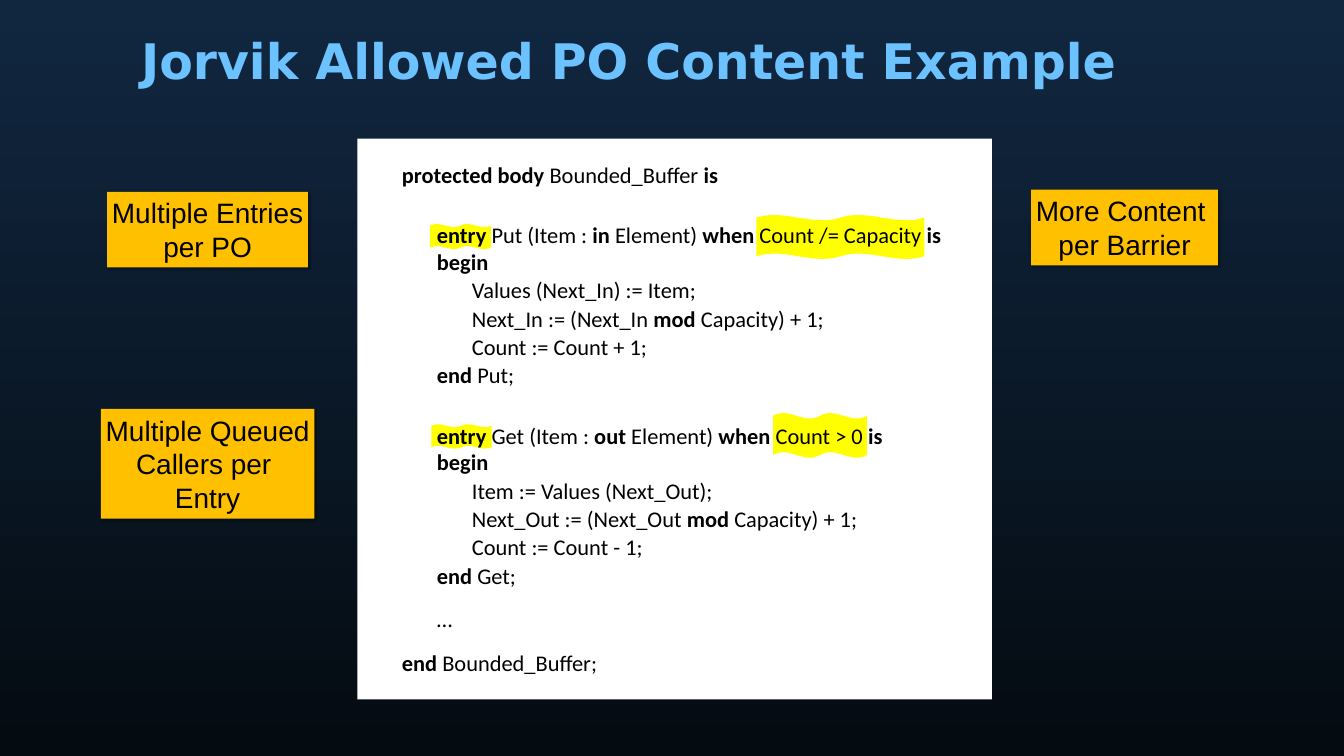
from lxml import etree
from pptx import Presentation
from pptx.dml.color import RGBColor
from pptx.enum.shapes import MSO_SHAPE
from pptx.enum.text import MSO_ANCHOR, PP_ALIGN
from pptx.oxml.ns import qn
from pptx.util import Pt

RECT, WAVE = MSO_SHAPE.RECTANGLE, MSO_SHAPE.DOUBLE_WAVE
MIDDLE, CENTER = MSO_ANCHOR.MIDDLE, PP_ALIGN.CENTER

NIGHT = RGBColor(0x11, 0x27, 0x40)
DEEP = RGBColor(0x04, 0x0B, 0x11)
SKY = RGBColor(0x6B, 0xC2, 0xFF)
WHITE = RGBColor(0xFF, 0xFF, 0xFF)
BLACK = RGBColor(0, 0, 0)
YELLOW = RGBColor(0xFF, 0xFF, 0)
AMBER = RGBColor(0xFF, 0xC0, 0)

INDENT = 50

# Code lines: indent level, space before, text with keywords between asterisks
CODE = [
    (0, 0, "*protected body *Bounded_Buffer *is*"),
    (1, 48, "*entry *Put (Item : *in *Element) *when *Count /= Capacity *is*"),
    (1, 0, "*begin*"),
    (2, 2, "Values (Next_In) := Item;"),
    (2, 2, "Next_In := (Next_In *mod *Capacity) + 1;"),
    (2, 2, "Count := Count + 1;"),
    (1, 2, "*end *Put;"),
    (1, 48, "*entry *Get (Item : *out *Element) *when *Count > 0 *is*"),
    (1, 0, "*begin*"),
    (2, 2, "Item := Values (Next_Out);"),
    (2, 2, "Next_Out := (Next_Out *mod *Capacity) + 1;"),
    (2, 2, "Count := Count - 1;"),
    (1, 2, "*end *Get;"),
    (1, 24, "…"),
    (0, 24, "*end *Bounded_Buffer;"),
]

# Offsets from the corner of the code panel, then sizes
HIGHLIGHTS = [
    (104, 122, 87, 36),
    (570, 109, 240, 63),
    (106, 408, 86, 35),
    (594, 392, 134, 64),
]

LABELS = [
    ((153, 274, 287, 108), ["Multiple Entries", "per PO"]),
    ((144, 584, 305, 157), ["Multiple Queued", "Callers per ", "Entry"]),
    ((1473, 271, 267, 108), ["More Content ", "per Barrier"]),
]


def set_font(p, name, size, color, bold=False):
    p.font.name, p.font.size, p.font.bold = name, Pt(size), bold
    p.font.color.rgb = color


def set_insets(tf, inset):
    tf.margin_left = tf.margin_top = tf.margin_right = tf.margin_bottom = Pt(inset)


def add_block(s, kind, box, color):
    """Add a plain filled shape without line or shadow."""
    sp = s.shapes.add_shape(kind, *map(Pt, box))
    sp.shadow.inherit = False
    sp.fill.solid()
    sp.fill.fore_color.rgb = color
    sp.line.fill.background()
    return sp


def add_shadow(sp):
    effects = sp._element.spPr.find(qn("a:effectLst"))
    shadow = etree.SubElement(effects, qn("a:outerShdw"), blurRad=str(Pt(4)),
                              dist=str(Pt(3)), dir="2700000", rotWithShape="0")
    color = etree.SubElement(shadow, qn("a:srgbClr"), val="000000")
    etree.SubElement(color, qn("a:alpha"), val="40000")


def paint_background(s):
    fill = s.background.fill
    fill.gradient()
    fill.gradient_angle = 270
    for stop, color in zip(fill.gradient_stops, (NIGHT, DEEP)):
        stop.color.rgb = color


def add_title(s, box, text):
    tf = s.shapes.add_textbox(*map(Pt, box)).text_frame
    tf.word_wrap = True
    tf.vertical_anchor = MIDDLE
    set_insets(tf, 3.6)
    p = tf.paragraphs[0]
    p.text = text
    p.line_spacing = 1.1
    set_font(p, "DejaVu Sans", 70, SKY, True)


def add_code_panel(s, box):
    left, top, width, height = box
    add_block(s, RECT, box, WHITE)
    for x, y, w, h in HIGHLIGHTS:
        add_block(s, WAVE, (left + x, top + y, w, h), YELLOW)
    text_box = (left + 56.6, top + 28, width - 113, height - 51)
    tf = s.shapes.add_textbox(*map(Pt, text_box)).text_frame
    tf.word_wrap = True
    for i, (level, before, line) in enumerate(CODE):
        p = tf.add_paragraph() if i else tf.paragraphs[0]
        p._p.get_or_add_pPr().set("marL", str(Pt(level * INDENT)))
        if before:
            p.space_before = Pt(before)
        set_font(p, "Calibri", 32, BLACK)
        for j, part in enumerate(line.split("*")):
            if part:
                r = p.add_run()
                r.text = part
                r.font.bold = j % 2 == 1


def add_label(s, box, lines):
    sp = add_block(s, RECT, box, AMBER)
    add_shadow(sp)
    tf = sp.text_frame
    tf.word_wrap = False
    tf.vertical_anchor = MIDDLE
    set_insets(tf, 5.76)
    for i, line in enumerate(lines):
        p = tf.add_paragraph() if i else tf.paragraphs[0]
        p.text = line
        p.alignment = CENTER
        set_font(p, "Arial", 40, BLACK)


def main():
    prs = Presentation()
    prs.slide_width, prs.slide_height = Pt(1920), Pt(1080)
    s = prs.slides.add_slide(prs.slide_layouts[6])
    paint_background(s)
    add_title(s, (198, 24.5, 1524, 113), "Jorvik Allowed PO Content Example")
    add_code_panel(s, (510.4, 198, 906.5, 801))
    for box, lines in LABELS:
        add_label(s, box, lines)
    prs.save("out.pptx")


if __name__ == "__main__":
    main()
